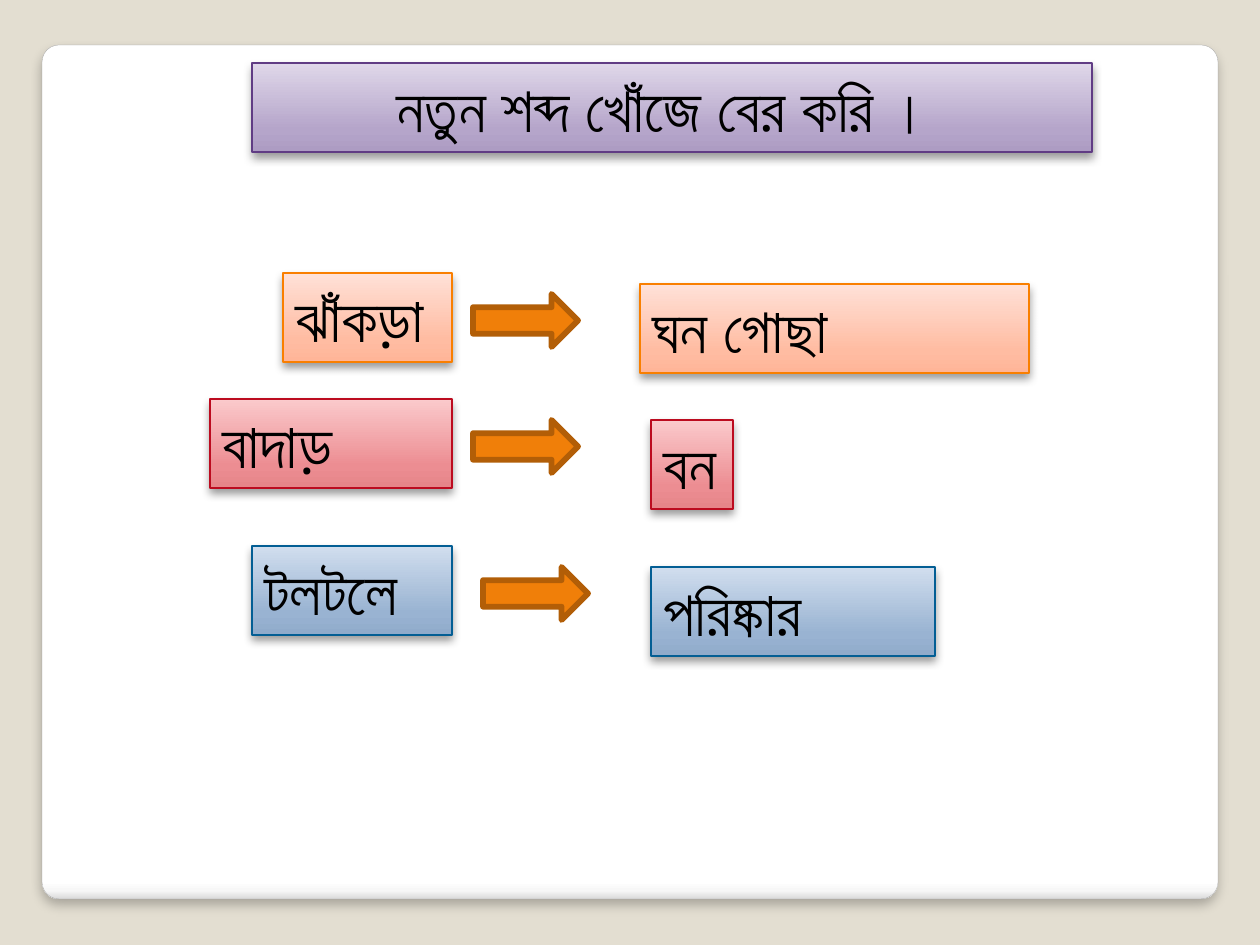
from pptx import Presentation
from pptx.dml.color import RGBColor
from pptx.enum.shapes import MSO_SHAPE
from pptx.enum.text import MSO_AUTO_SIZE, PP_ALIGN
from pptx.oxml import parse_xml
from pptx.oxml.ns import nsdecls, qn
from pptx.util import Emu, Pt

SCALE = 914400 / 126  # EMU per px

BACKGROUND = RGBColor(0xE3, 0xDE, 0xD1)
BLACK = RGBColor(0x00, 0x00, 0x00)
WHITE = RGBColor(0xFF, 0xFF, 0xFF)
PANEL_LINE = RGBColor(0xA4, 0xA4, 0xA4)
ARROW_FILL = RGBColor(0xF0, 0x7F, 0x09)
ARROW_LINE = RGBColor(0xB2, 0x5E, 0x07)

PANEL_STOPS = [(0, WHITE), (98, WHITE), (99, RGBColor(0xF7, 0xF7, 0xF7)),
               (100, RGBColor(0xDA, 0xDA, 0xDA))]


def theme(line, bottom, lower, top):
    return RGBColor.from_string(line), [
        (position, RGBColor.from_string(color))
        for position, color in ((0, bottom), (25, lower), (100, top))]


PURPLE = theme("603C84", "AD9CC3", "B5A5CA", "DFD7E9")
ORANGE = theme("F97F00", "FFB598", "FFBCA2", "FFE1D8")
RED = theme("BC0B1F", "E68589", "EC8D92", "FBCACC")
BLUE = theme("035E94", "90ABCB", "99B3D2", "D1DEEE")

TITLE = "নতুন শব্দ খোঁজে বের করি । "
# theme, (word, left, top), arrow (left, top), (meaning, left, top, width)
ROWS = [
    (ORANGE, ("ঝাঁকড়া", 283, 273), (473, 294), ("ঘন গোছা", 640, 284, 389)),
    (RED, ("বাদাড়", 210, 399), (473, 420), ("বন", 651, 420, 82)),
    (BLUE, ("টলটলে", 252, 546), (483, 567), ("পরিষ্কার", 651, 567, 284)),
]
WORD_RIGHT = 452
BOX_HEIGHT = 89
ARROW_SIZE = (105, 53)


def px(*lengths):
    return [Emu(round(length * SCALE)) for length in lengths]


def add_gradient(shape, stops, angle):
    shape.fill.gradient()
    shape.fill.gradient_angle = angle
    stop_list = shape._element.spPr.find(qn("a:gradFill")).find(qn("a:gsLst"))
    for stop in list(stop_list):
        stop_list.remove(stop)
    for position, color in stops:
        stop_list.append(parse_xml(
            f'<a:gs {nsdecls("a")} pos="{position * 1000}">'
            f'<a:srgbClr val="{color}"/></a:gs>'))


def add_shadow(shape, opacity, blur, distance):
    shape.shadow.inherit = False
    effects = shape._element.spPr.find(qn("a:effectLst"))
    effects.append(parse_xml(
        f'<a:outerShdw {nsdecls("a")} blurRad="{Pt(blur)}" dist="{Pt(distance)}" '
        f'dir="5400000" rotWithShape="0"><a:srgbClr val="{BLACK}">'
        f'<a:alpha val="{opacity * 1000}"/></a:srgbClr></a:outerShdw>'))


def set_line(shape, color, width):
    shape.line.color.rgb = color
    shape.line.width = Pt(width)


def add_box(slide, text, left, top, width, colors, alignment=PP_ALIGN.LEFT):
    line, stops = colors
    box = slide.shapes.add_textbox(*px(left, top, width, BOX_HEIGHT))
    add_gradient(box, stops, 90)
    set_line(box, line, 0.75)
    add_shadow(box, 40, 5.2, 3)
    frame = box.text_frame
    frame.word_wrap = True
    frame.auto_size = MSO_AUTO_SIZE.SHAPE_TO_FIT_TEXT
    paragraph = frame.paragraphs[0]
    paragraph.text = text
    paragraph.alignment = alignment
    paragraph.font.name = "Arial"
    paragraph.font.size = Pt(36)
    paragraph.font.color.rgb = BLACK
    return box


def add_arrow(slide, left, top):
    arrow = slide.shapes.add_shape(MSO_SHAPE.RIGHT_ARROW, *px(left, top, *ARROW_SIZE))
    arrow.shadow.inherit = False
    arrow.fill.solid()
    arrow.fill.fore_color.rgb = ARROW_FILL
    set_line(arrow, ARROW_LINE, 3.35)


def main():
    presentation = Presentation()
    presentation.slide_width, presentation.slide_height = px(1260, 945)
    slide = presentation.slides.add_slide(presentation.slide_layouts[6])
    slide.background.fill.solid()
    slide.background.fill.fore_color.rgb = BACKGROUND

    # White panel
    panel = slide.shapes.add_shape(MSO_SHAPE.ROUNDED_RECTANGLE, *px(42, 45, 1176, 854))
    panel.adjustments[0] = 0.02
    add_gradient(panel, PANEL_STOPS, 270)
    set_line(panel, PANEL_LINE, 0.16)
    add_shadow(panel, 25, 6, 4)

    # Title
    add_box(slide, TITLE, 252, 63, 840, PURPLE, PP_ALIGN.CENTER)

    # Each word, an arrow, and its meaning
    for colors, (word, left, top), arrow, meaning in ROWS:
        add_box(slide, word, left, top, WORD_RIGHT - left, colors)
        add_arrow(slide, *arrow)
        meaning_box = add_box(slide, *meaning, colors)
        meaning_box.text_frame.word_wrap = colors is not RED

    presentation.save("out.pptx")


if __name__ == "__main__":
    main()
